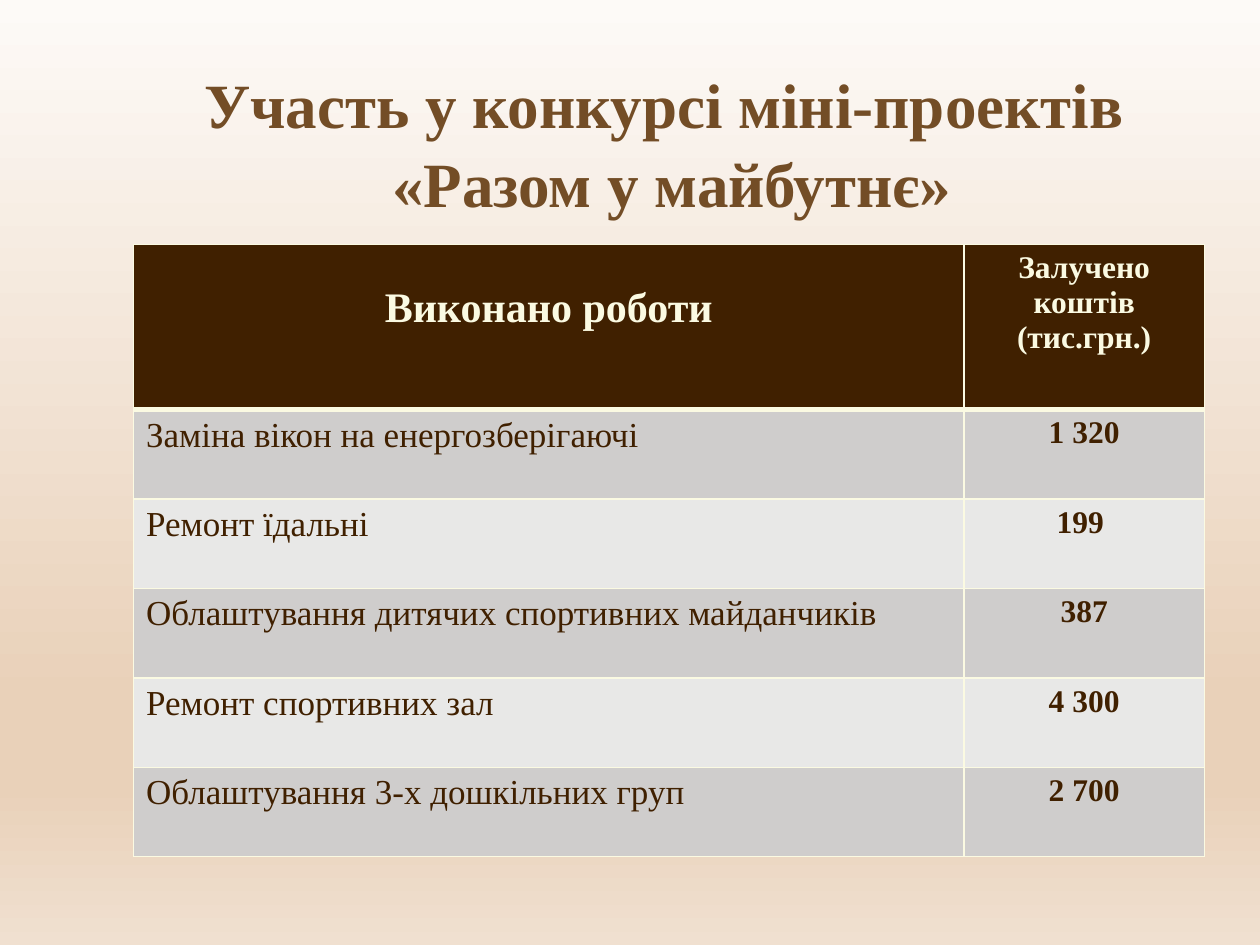
from lxml import etree
from pptx import Presentation
from pptx import util as u
from pptx.dml.color import RGBColor
from pptx.enum import text
from pptx.oxml.ns import qn

FONT = "Times New Roman"
COLORS = {
    "title": "734D26",
    "dark": "402000",
    "cream": "FBFAE2",
    "odd_row": "CFCDCC",
    "even_row": "E8E8E7",
}
BACKGROUND_STOPS = [(0, "FDFAF7"), (74, "E9D1B9"), (83, "E9D1B9"), (100, "F0E0D0")]
COLUMN_WIDTHS = [6.59, 1.91]
HEADER_HEIGHT, ROW_HEIGHT = 1.31, 0.71
WORKS = [
    ("Заміна вікон на енергозберігаючі", "1 320"),
    ("Ремонт їдальні", "199 "),
    ("Облаштування дитячих спортивних майданчиків", "387"),
    ("Ремонт спортивних зал", "4 300"),
    ("Облаштування 3-х дошкільних груп", "2 700"),
]


def rgb(name):
    return RGBColor.from_string(COLORS[name])


def paint_background(slide):
    fill = slide.background.fill
    fill.gradient()
    fill.gradient_angle = 270
    stops = slide.element.find(".//" + qn("a:gsLst"))
    for stop in list(stops):
        stops.remove(stop)
    for percent, color in BACKGROUND_STOPS:
        stop = etree.SubElement(stops, qn("a:gs"), pos=str(percent * 1000))
        etree.SubElement(stop, qn("a:srgbClr"), val=color)


def write(frame, content, size, color, bold, centered=True):
    frame.text = content
    for paragraph in frame.paragraphs:
        paragraph.alignment = text.PP_ALIGN.CENTER if centered else text.PP_ALIGN.LEFT
        paragraph.font.name = FONT
        paragraph.font.size = u.Pt(size)
        paragraph.font.bold = bold
        paragraph.font.color.rgb = rgb(color)


def add_title(slide, left, top, width, height):
    box = slide.shapes.add_textbox(*map(u.Inches, (left, top, width, height)))
    frame = box.text_frame
    frame.word_wrap = False
    write(frame, "Участь у конкурсі міні-проектів\v «Разом у майбутнє»", 36, "title", True)
    frame.paragraphs[0].line_spacing = 1.05


def set_borders(cell, top=1, bottom=1):
    """Draw cream cell borders, ahead of the fill as the schema requires."""
    properties = cell._tc.get_or_add_tcPr()
    widths = {"a:lnL": 1, "a:lnR": 1, "a:lnT": top, "a:lnB": bottom}
    for position, (tag, width) in enumerate(widths.items()):
        line = etree.Element(qn(tag), w=str(u.Pt(width)))
        fill = etree.SubElement(line, qn("a:solidFill"))
        etree.SubElement(fill, qn("a:srgbClr"), val=COLORS["cream"])
        properties.insert(position, line)


def fill_cell(cell, background, **borders):
    cell.fill.solid()
    cell.fill.fore_color.rgb = rgb(background)
    set_borders(cell, **borders)


def add_works_table(slide, left, top):
    heights = [HEADER_HEIGHT] + [ROW_HEIGHT] * len(WORKS)
    table = slide.shapes.add_table(
        len(heights), len(COLUMN_WIDTHS), u.Inches(left), u.Inches(top),
        u.Inches(sum(COLUMN_WIDTHS)), u.Inches(sum(heights)),
    ).table
    for column, width in zip(table.columns, COLUMN_WIDTHS):
        column.width = u.Inches(width)
    for row, height in zip(table.rows, heights):
        row.height = u.Inches(height)

    work_header, funds_header = table.rows[0].cells
    write(work_header.text_frame, "Виконано роботи", 24, "cream", True)
    work_header.margin_top = u.Inches(0.32)
    write(funds_header.text_frame, "Залучено коштів\n(тис.грн.)", 18, "cream", True)
    for cell in (work_header, funds_header):
        fill_cell(cell, "dark", bottom=3)

    for number, (work, funds) in enumerate(WORKS, start=1):
        work_cell, funds_cell = table.rows[number].cells
        write(work_cell.text_frame, work, 20, "dark", False, centered=False)
        write(funds_cell.text_frame, funds, 18, "dark", True)
        for cell in (work_cell, funds_cell):
            fill_cell(cell, "odd_row" if number % 2 else "even_row",
                      top=3 if number == 1 else 1)


def main():
    presentation = Presentation()
    presentation.slide_width, presentation.slide_height = u.Inches(10), u.Inches(7.5)
    slide = presentation.slides.add_slide(presentation.slide_layouts[6])
    paint_background(slide)
    add_title(slide, 1.44, 0.44, 7.66, 1.31)
    add_works_table(slide, 1.06, 1.94)
    presentation.save("out.pptx")


if __name__ == "__main__":
    main()
